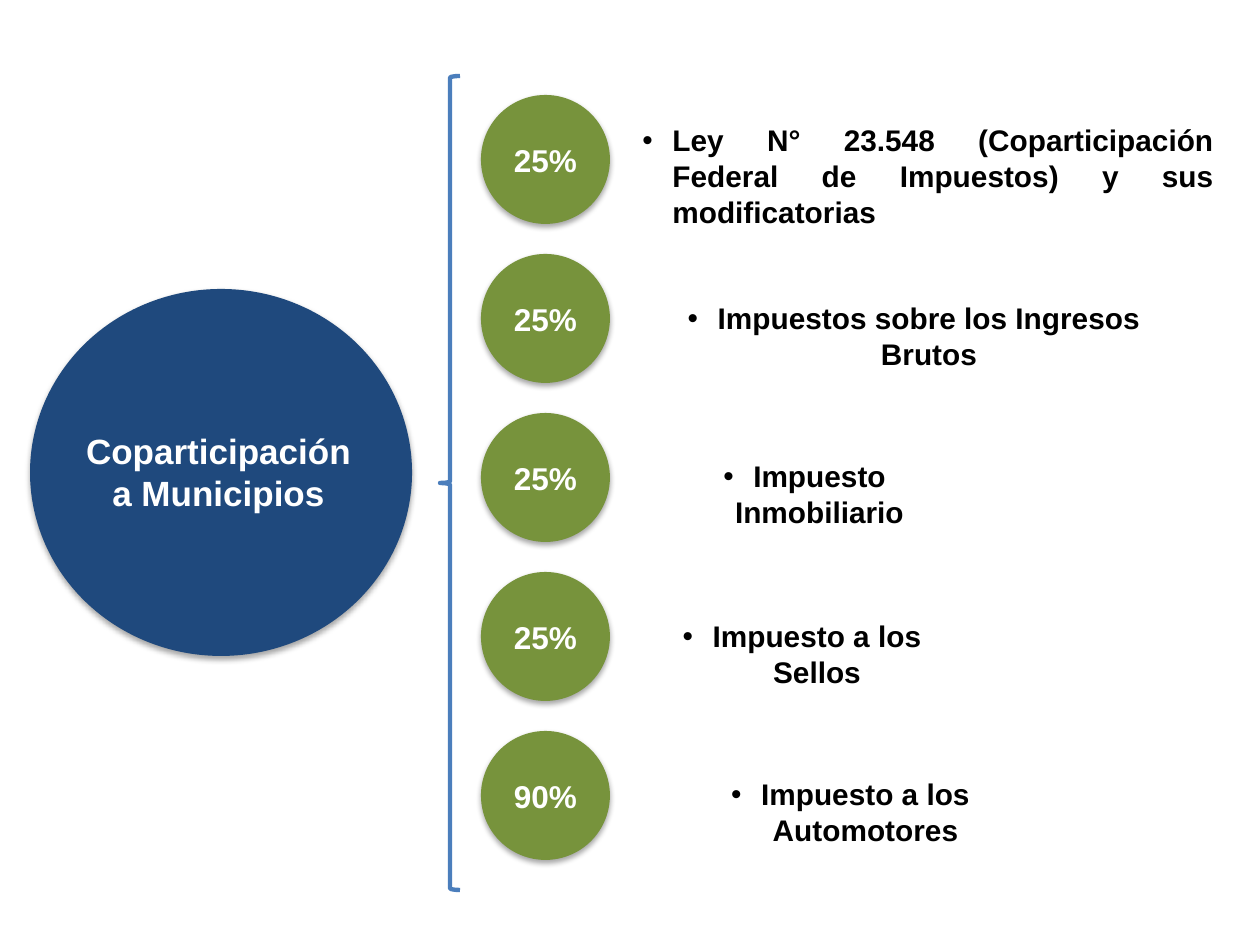
from dataclasses import dataclass

import pptx
import pptx.dml.color
import pptx.enum.shapes
import pptx.enum.text
import pptx.oxml
import pptx.oxml.ns
import pptx.util
from lxml import etree

RGB = pptx.dml.color.RGBColor
ALIGN = pptx.enum.text.PP_ALIGN
SHAPE = pptx.enum.shapes.MSO_SHAPE

NAVY = RGB(0x1F, 0x49, 0x7D)
GREEN = RGB(0x77, 0x93, 0x3C)
BLUE = RGB(0x4B, 0x7E, 0xBC)
WHITE = RGB(0xFF, 0xFF, 0xFF)
BLACK = RGB(0, 0, 0)

PX_PER_INCH = 126
FIRST_CIRCLE_TOP = 95
CIRCLE_SIZE = 129
CIRCLE_STEP = 159
TAX_LEFT = 630
BULLET_INDENT = 30


@dataclass
class Tax:
    share: str
    name: str
    top: int
    width: int
    height: int = 49
    align: ALIGN = ALIGN.CENTER


TAXES = [
    Tax("25%", "Ley N° 23.548 (Coparticipación Federal de Impuestos) y sus modificatorias",
        116, 596, 84, ALIGN.JUSTIFY),
    Tax("25%", "Impuestos sobre los Ingresos Brutos", 294, 568),
    Tax("25%", "Impuesto Inmobiliario", 452, 349),
    Tax("25%", "Impuesto a los Sellos", 612, 344),
    Tax("90%", "Impuesto a los Automotores", 770, 441),
]


def px(length: int) -> pptx.util.Emu:
    return pptx.util.Emu(round(length * 914400 / PX_PER_INCH))


def add_run(paragraph, text: str, size: int, color: RGB) -> None:
    run = paragraph.add_run()
    run.text = text
    run.font.name = "Arial"
    run.font.size = pptx.util.Pt(size)
    run.font.bold = True
    run.font.color.rgb = color


def add_soft_shadow(shape) -> None:
    shape.shadow.inherit = False
    effects = shape._element.spPr.find(pptx.oxml.ns.qn("a:effectLst"))
    effects.append(pptx.oxml.parse_xml(
        '<a:outerShdw xmlns:a="http://schemas.openxmlformats.org/drawingml/2006/main"'
        ' blurRad="40000" dist="23000" dir="5400000" rotWithShape="0">'
        '<a:srgbClr val="000000"><a:alpha val="35000"/></a:srgbClr></a:outerShdw>'))


def add_ellipse(slide, left: int, top: int, width: int, height: int, fill: RGB,
                text: str, size: int, insets: tuple[int, int, int, int] = (0, 0, 0, 0)) -> None:
    ellipse = slide.shapes.add_shape(SHAPE.OVAL, px(left), px(top), px(width), px(height))
    ellipse.fill.solid()
    ellipse.fill.fore_color.rgb = fill
    ellipse.line.fill.background()
    add_soft_shadow(ellipse)
    frame = ellipse.text_frame
    frame.word_wrap = True
    frame.vertical_anchor = pptx.enum.text.MSO_ANCHOR.MIDDLE
    frame.margin_left, frame.margin_top, frame.margin_right, frame.margin_bottom = map(px, insets)
    frame.paragraphs[0].alignment = ALIGN.CENTER
    add_run(frame.paragraphs[0], text, size, WHITE)


def add_tax_name(slide, tax: Tax) -> None:
    box = slide.shapes.add_textbox(px(TAX_LEFT), px(tax.top), px(tax.width), px(tax.height))
    box.text_frame.word_wrap = True
    paragraph = box.text_frame.paragraphs[0]
    paragraph.alignment = tax.align
    properties = paragraph._p.get_or_add_pPr()
    properties.set("marL", str(px(BULLET_INDENT)))
    properties.set("indent", str(-px(BULLET_INDENT)))
    etree.SubElement(properties, pptx.oxml.ns.qn("a:buFont"), typeface="Arial")
    etree.SubElement(properties, pptx.oxml.ns.qn("a:buChar"), char="•")
    add_run(paragraph, tax.name, 17, BLACK)


def add_brace(slide) -> None:
    brace = slide.shapes.add_shape(SHAPE.LEFT_BRACE, px(440), px(76), px(20), px(814))
    brace.shadow.inherit = False
    brace.fill.background()
    brace.line.color.rgb = BLUE
    brace.line.width = pptx.util.Pt(2.5)


def main() -> None:
    presentation = pptx.Presentation()
    presentation.slide_width = px(1260)
    presentation.slide_height = px(945)
    slide = presentation.slides.add_slide(presentation.slide_layouts[6])

    # Total on the left and the brace that splits it
    add_ellipse(slide, 30, 289, 382, 367, NAVY, "Coparticipación a Municipios", 20, (0, 5, 5, 6))
    add_brace(slide)

    # Share and name of each tax
    for row, tax in enumerate(TAXES):
        add_ellipse(slide, 481, FIRST_CIRCLE_TOP + row * CIRCLE_STEP,
                    CIRCLE_SIZE, CIRCLE_SIZE, GREEN, tax.share, 18)
        add_tax_name(slide, tax)

    presentation.save("out.pptx")


if __name__ == "__main__":
    main()
